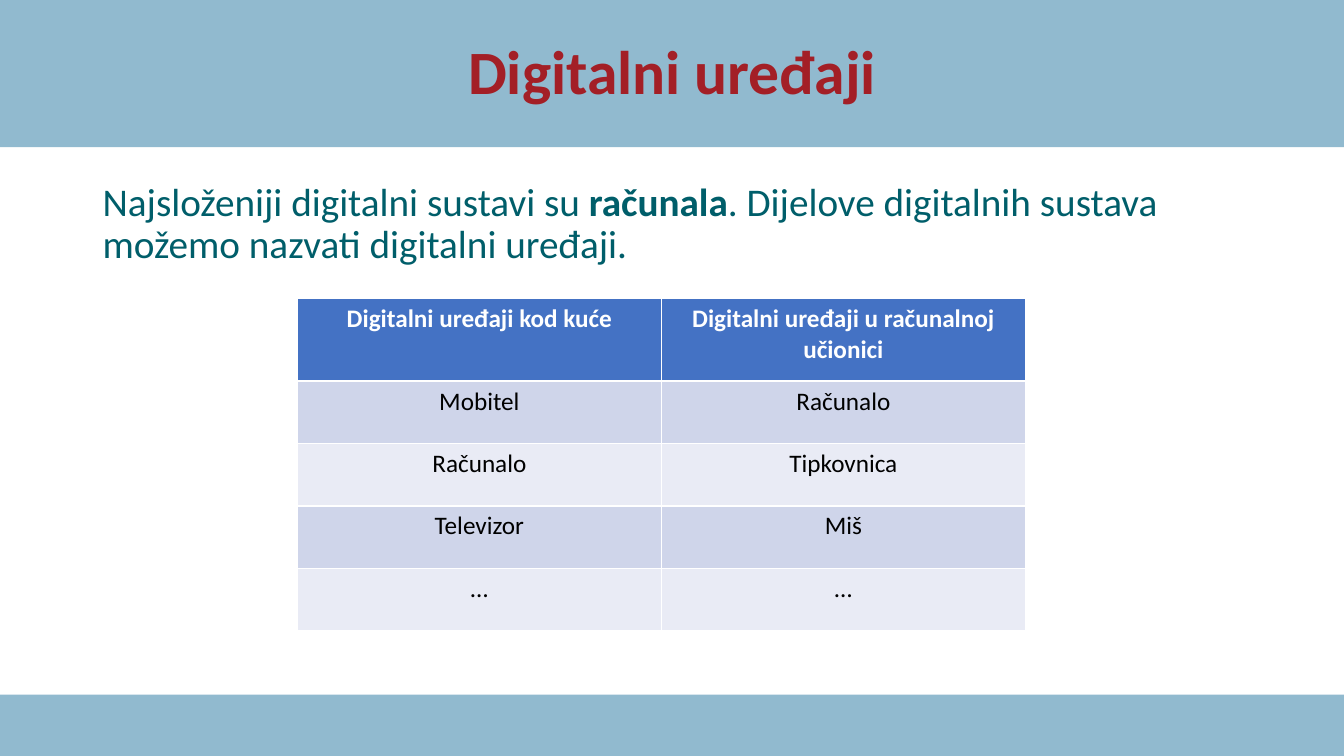
from pptx import Presentation
from pptx import util as u
from pptx.dml.color import RGBColor
from pptx.enum import shapes, text

BAND_BLUE = RGBColor(0x91, 0xBA, 0xCF)
TITLE_RED = RGBColor(0xA3, 0x1F, 0x26)
BODY_TEAL = RGBColor(0x00, 0x5E, 0x6A)
HEADER_BLUE = RGBColor(0x44, 0x72, 0xC4)
ROW_FILLS = (RGBColor(0xE9, 0xEB, 0xF5), RGBColor(0xCF, 0xD5, 0xEA))
WHITE = RGBColor(0xFF, 0xFF, 0xFF)
BLACK = RGBColor(0x00, 0x00, 0x00)

DEVICES = [
    ("Digitalni uređaji kod kuće", "Digitalni uređaji u računalnoj učionici"),
    ("Mobitel", "Računalo"),
    ("Računalo", "Tipkovnica"),
    ("Televizor", "Miš"),
    ("…", "…"),
]


class SlideBuilder:
    font_name = "Calibri"
    line_spacing = 0.9

    def __init__(self, presentation):
        self.width = presentation.slide_width
        self.slide = presentation.slides.add_slide(presentation.slide_layouts[5])

    def style(self, font, size, color, bold=False):
        font.name = self.font_name
        font.size = u.Pt(size)
        font.color.rgb = color
        font.bold = bold

    def band(self, top, height):
        shape = self.slide.shapes.add_shape(
            shapes.MSO_SHAPE.RECTANGLE, 0, u.Inches(top), self.width, u.Inches(height))
        shape.shadow.inherit = False
        shape.fill.solid()
        shape.fill.fore_color.rgb = BAND_BLUE
        shape.line.fill.background()

    def title(self, wording, left, top, width, height):
        title = self.slide.shapes.title
        title.left, title.top = u.Inches(left), u.Inches(top)
        title.width, title.height = u.Inches(width), u.Inches(height)
        # Bring the title in front of the bands
        title.element.getparent().append(title.element)
        frame = title.text_frame
        frame.text = wording
        frame.vertical_anchor = text.MSO_ANCHOR.MIDDLE
        paragraph = frame.paragraphs[0]
        paragraph.alignment = text.PP_ALIGN.CENTER
        paragraph.line_spacing = self.line_spacing
        self.style(paragraph.runs[0].font, 44, TITLE_RED, bold=True)

    def body(self, parts, left, top, width, height):
        box = self.slide.shapes.add_textbox(
            u.Inches(left), u.Inches(top), u.Inches(width), u.Inches(height))
        box.text_frame.word_wrap = True
        paragraph = box.text_frame.paragraphs[0]
        paragraph.line_spacing = self.line_spacing
        for wording, bold in parts:
            run = paragraph.add_run()
            run.text = wording
            self.style(run.font, 28, BODY_TEAL, bold)

    def table(self, rows, left, top, column_width, header_height, row_height):
        columns = len(rows[0])
        height = header_height + row_height * (len(rows) - 1)
        table = self.slide.shapes.add_table(
            len(rows), columns, u.Inches(left), u.Inches(top),
            u.Inches(column_width * columns), u.Inches(height)).table
        for column in table.columns:
            column.width = u.Inches(column_width)
        for index, wordings in enumerate(rows):
            header = index == 0
            table.rows[index].height = u.Inches(header_height if header else row_height)
            for cell, wording in zip(table.rows[index].cells, wordings):
                cell.fill.solid()
                cell.fill.fore_color.rgb = HEADER_BLUE if header else ROW_FILLS[index % 2]
                cell.text_frame.text = wording
                paragraph = cell.text_frame.paragraphs[0]
                paragraph.alignment = text.PP_ALIGN.CENTER
                self.style(paragraph.runs[0].font, 18, WHITE if header else BLACK, header)


def main():
    presentation = Presentation()
    presentation.slide_width = u.Inches(13.33)
    presentation.slide_height = u.Inches(7.5)
    builder = SlideBuilder(presentation)

    # Bands at the bottom and top
    builder.band(6.89, 0.61)
    builder.band(0, 1.46)

    # Title and introduction
    builder.title("Digitalni uređaji", 0.92, 0.21, 11.5, 1.06)
    builder.body([
        ("Najsloženiji digitalni sustavi su ", False),
        ("računala", True),
        (". Dijelove digitalnih sustava možemo nazvati digitalni uređaji.", False),
    ], 0.92, 1.76, 11.5, 1.04)

    # Devices at home and in the classroom
    builder.table(DEVICES, 2.95, 2.96, 3.61, 0.82, 0.62)

    presentation.save("out.pptx")


if __name__ == "__main__":
    main()
